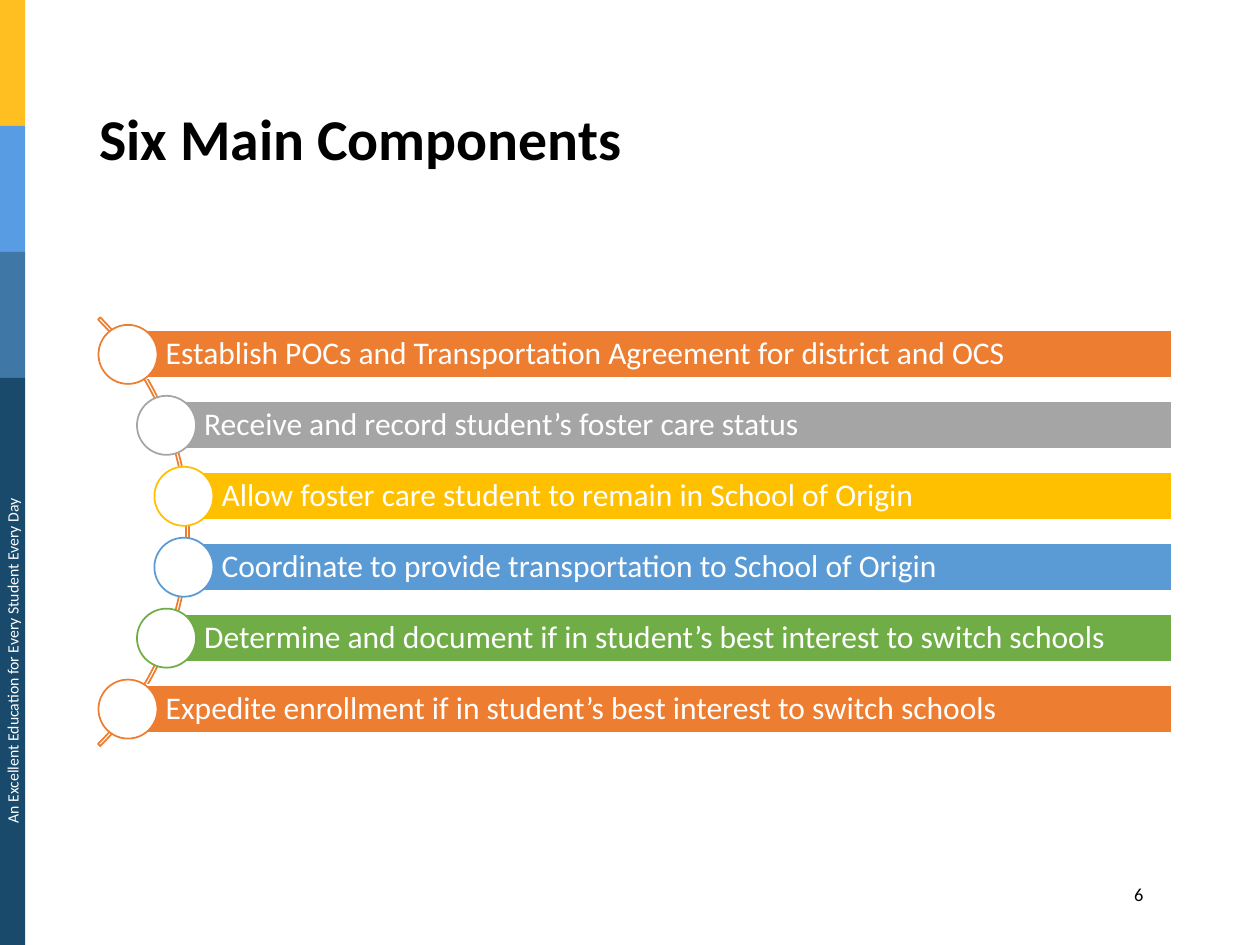
from math import sqrt

from pptx import Presentation
from pptx.dml.color import RGBColor
from pptx.enum.shapes import MSO_SHAPE
from pptx.enum.text import MSO_ANCHOR, PP_ALIGN
from pptx.util import Cm, Pt

RECTANGLE, OVAL, BLOCK_ARC = MSO_SHAPE.RECTANGLE, MSO_SHAPE.OVAL, MSO_SHAPE.BLOCK_ARC
TOP, MIDDLE = MSO_ANCHOR.TOP, MSO_ANCHOR.MIDDLE
LEFT, CENTER, RIGHT = PP_ALIGN.LEFT, PP_ALIGN.CENTER, PP_ALIGN.RIGHT

# Content
TITLE = "Six Main Components"
MOTTO = "An Excellent Education for Every Student Every Day"
PAGE_NUMBER = "6"
COMPONENTS = [
    ("Establish POCs and Transportation Agreement for district and OCS", "orange"),
    ("Receive and record student’s foster care status", "gray"),
    ("Allow foster care student to remain in School of Origin", "gold"),
    ("Coordinate to provide transportation to School of Origin", "blue"),
    ("Determine and document if in student’s best interest to switch schools", "green"),
    ("Expedite enrollment if in student’s best interest to switch schools", "orange"),
]
SIDE_BANDS = [  # colour, height in cm
    ("band_yellow", 2.54), ("band_sky", 2.54), ("band_steel", 2.54), ("band_navy", 11.43),
]

THEME = {
    "font": "Calibri",
    "sizes": {"title": 33, "component": 18, "number": 10.5, "motto": 9},
    "colors": {
        "black": "000000", "white": "FFFFFF",
        "orange": "ED7D31", "gray": "A5A5A5", "gold": "FFC000",
        "blue": "5B9BD5", "green": "70AD47",
        "band_yellow": "FFBF20", "band_sky": "589CE3",
        "band_steel": "3F78A7", "band_navy": "194A6B",
    },
}

# Layout, in cm
BAND_WIDTH = 0.51
ARC_CENTER_X, ARC_CENTER_Y, ARC_SIZE = -2.3, 10.72, 12.22
CIRCLE_PATH_RADIUS, CIRCLE_SIZE = 6.05, 1.19
ROW_PITCH, BAR_HEIGHT, BAR_RIGHT = 1.43, 0.96, 23.62


def color(name):
    return RGBColor.from_string(THEME["colors"][name])


def add_shape(slide, kind, left, top, width, height, fill=None, line=None):
    shape = slide.shapes.add_shape(kind, Cm(left), Cm(top), Cm(width), Cm(height))
    shape.shadow.inherit = False
    if fill:
        shape.fill.solid()
        shape.fill.fore_color.rgb = color(fill)
    else:
        shape.fill.background()
    if line:
        shape.line.color.rgb = color(line)
        shape.line.width = Pt(1)
    else:
        shape.line.fill.background()
    return shape


def write(shape, text, role, ink, align=LEFT, anchor=TOP, bold=False, spacing=None):
    text_frame = shape.text_frame
    text_frame.text = text
    text_frame.word_wrap = True
    text_frame.vertical_anchor = anchor
    paragraph = text_frame.paragraphs[0]
    paragraph.alignment = align
    if spacing:
        paragraph.line_spacing = spacing
    font = paragraph.runs[0].font
    font.name = THEME["font"]
    font.size = Pt(THEME["sizes"][role])
    font.bold = bold
    font.color.rgb = color(ink)


def add_text(slide, left, top, width, height, *content, **style):
    box = slide.shapes.add_textbox(Cm(left), Cm(top), Cm(width), Cm(height))
    write(box, *content, **style)
    return box


def add_side_strip(slide):
    top = 0
    for fill, height in SIDE_BANDS:
        add_shape(slide, RECTANGLE, 0, top, BAND_WIDTH, height, fill)
        top += height
    motto = add_text(slide, -5.46, 13, 11.43, 0.64, MOTTO, "motto", "white", align=CENTER)
    motto.rotation = 270


def add_component(slide, index, text, accent):
    # Circle centres lie on an arc, evenly spaced down the slide
    offset = (index - (len(COMPONENTS) - 1) / 2) * ROW_PITCH
    center_x = ARC_CENTER_X + sqrt(CIRCLE_PATH_RADIUS ** 2 - offset ** 2)
    center_y = ARC_CENTER_Y + offset
    bar = add_shape(slide, RECTANGLE, center_x, center_y - BAR_HEIGHT / 2,
                    BAR_RIGHT - center_x, BAR_HEIGHT, accent, "white")
    write(bar, text, "component", "white", anchor=MIDDLE, spacing=0.9)
    text_frame = bar.text_frame
    text_frame.margin_left = Cm(0.76)
    text_frame.margin_right = text_frame.margin_top = text_frame.margin_bottom = Cm(0.13)
    add_shape(slide, OVAL, center_x - CIRCLE_SIZE / 2, center_y - CIRCLE_SIZE / 2,
              CIRCLE_SIZE, CIRCLE_SIZE, "white", accent)


def main():
    presentation = Presentation()
    presentation.slide_width, presentation.slide_height = Cm(25.4), Cm(19.05)
    slide = presentation.slides.add_slide(presentation.slide_layouts[6])

    # Frame: side strip, page number and title
    add_side_strip(slide)
    add_text(slide, 21.67, 17.68, 1.63, 0.71, PAGE_NUMBER, "number", "black", align=RIGHT)
    add_text(slide, 1.75, 1.02, 21.9, 3.68, TITLE, "title", "black",
             anchor=MIDDLE, bold=True, spacing=0.9)

    # Curved list: thin arc from -45 to 45 degrees, then one row per component
    arc = add_shape(slide, BLOCK_ARC, ARC_CENTER_X - ARC_SIZE / 2,
                    ARC_CENTER_Y - ARC_SIZE / 2, ARC_SIZE, ARC_SIZE, line="orange")
    for position, value in enumerate((189, 27, 0.005)):
        arc.adjustments[position] = value
    for index, (text, accent) in enumerate(COMPONENTS):
        add_component(slide, index, text, accent)

    presentation.save("out.pptx")


if __name__ == "__main__":
    main()
